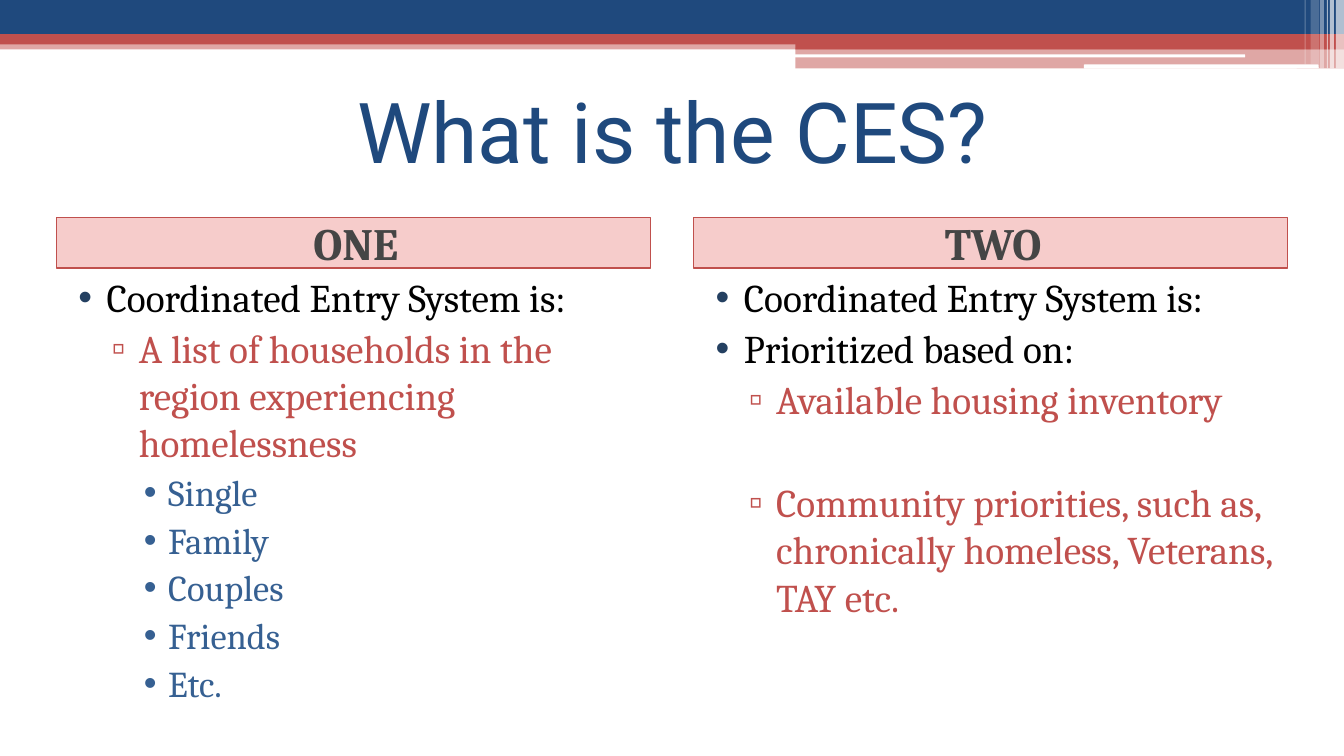
from lxml.etree import SubElement
from pptx import Presentation
from pptx.dml.color import RGBColor
from pptx.enum.shapes import MSO_SHAPE
from pptx.enum.text import MSO_ANCHOR, PP_ALIGN
from pptx.oxml.ns import qn
from pptx.util import Inches, Pt

HUE = {
    "navy": "1F497D", "brick": "C0504D", "white": "FFFFFF", "pink": "DD3530",
    "gray": "454545", "black": "000000", "ink": "244061", "blue": "366092",
}

deck = Presentation()
deck.slide_width, deck.slide_height = Inches(13.33), Inches(7.5)
slide = deck.slides.add_slide(deck.slide_layouts[6])


def block(box, hue, alpha=100, kind=MSO_SHAPE.RECTANGLE):
    shape = slide.shapes.add_shape(kind, *map(Inches, box))
    shape.shadow.inherit = False
    shape.line.fill.background()
    shape.fill.solid()
    shape.fill.fore_color.rgb = RGBColor.from_string(HUE[hue])
    if alpha < 100:
        color = shape.fill._xPr.find(".//" + qn("a:srgbClr"))
        SubElement(color, qn("a:alpha"), val=str(alpha * 1000))
    return shape


def style(para, face, size, hue, bold=False):
    for run in para.runs:
        run.font.name, run.font.size, run.font.bold = face, Pt(size), bold
        run.font.color.rgb = RGBColor.from_string(HUE[hue])


# Banner bands: left, top, width, height, colour, opacity
wide, half = 13.33, 7.89
for *box, hue, alpha in [
    (0, 0.4, wide, 0.09, "brick", 50),
    (0, 0, wide, 0.34, "navy", 100),
    (0, 0.34, wide, 0.1, "brick", 100),
    (half, 0.39, wide - half, 0.1, "brick", 100),
    (half, 0.48, wide - half, 0.2, "brick", 50),
]:
    block(box, hue, alpha)

# White slits in the banner
for box in [(7.88, 0.54, 4.47, 0.03), (10.75, 0.64, 2.33, 0.04)]:
    block(box, "white", kind=MSO_SHAPE.ROUNDED_RECTANGLE)

# Pale stripes at the right end: left, width, height, opacity
for left, width, high, alpha in [
    (13.25, 0.08, 0.68, 65), (13.19, 0.04, 0.68, 65), (13.16, 0.01, 0.68, 60),
    (13.09, 0.04, 0.68, 40), (13, 0.08, 0.64, 20), (12.94, 0.01, 0.64, 30),
]:
    block((left, 0, width, high), "white", alpha)

# Title
edge = 0.56
title = slide.shapes.add_textbox(*map(Inches, (edge, 0.7, 12.22, 1.17)))
frame = title.text_frame
frame.word_wrap = True
frame.vertical_anchor = MSO_ANCHOR.MIDDLE
frame.text = "What is the CES?"
frame.paragraphs[0].alignment = PP_ALIGN.CENTER
style(frame.paragraphs[0], "Roboto", 60, "navy")

# Outline levels: indent, hang, bullet, bullet colour, size, text colour
LEVELS = [
    (0.4, 0.28, "•", "ink", 28, "black"),
    (0.72, 0.27, "▫", "brick", 28, "brick"),
    (1.01, 0.24, "•", "blue", 26, "blue"),
]
GAP, BREAK = 3, 40  # points before a paragraph

# Columns: heading, then level, text, space before
COLUMNS = [
    ("ONE", [
        (0, "Coordinated Entry System is:", 0),
        (1, "A list of households in the region experiencing homelessness", GAP),
        (2, "Single", GAP),
        (2, "Family", GAP),
        (2, "Couples", GAP),
        (2, "Friends", GAP),
        (2, "Etc.", GAP),
    ]),
    ("TWO", [
        (0, "Coordinated Entry System is:", 0),
        (0, "Prioritized based on:", GAP),
        (1, "Available housing inventory", GAP),
        (1, "Community priorities, such as, chronically homeless, Veterans, "
            "TAY etc.", BREAK),
    ]),
]
span, pitch, top, tall = 5.89, 6.32, 2.16, 0.5

for col, (name, items) in enumerate(COLUMNS):
    left = edge + col * pitch

    # Heading bar
    head = block((left, top, span, tall), "pink", 25)
    head.line.color.rgb = RGBColor.from_string(HUE["brick"])
    head.line.width = Pt(1)
    frame = head.text_frame
    frame.vertical_anchor = MSO_ANCHOR.MIDDLE
    frame.text = name
    para = frame.paragraphs[0]
    para.alignment = PP_ALIGN.CENTER
    para._p.get_or_add_pPr().set("marL", str(Inches(0.05)))
    style(para, "Cambria", 32, "gray", True)

    # Bulleted list
    body = slide.shapes.add_textbox(
        *map(Inches, (left, top + tall, span, 4.55)))
    frame = body.text_frame
    frame.word_wrap = True
    for row, (level, text, space) in enumerate(items):
        indent, hang, mark, tint, size, hue = LEVELS[level]
        para = frame.add_paragraph() if row else frame.paragraphs[0]
        para.text = text
        para.level = level
        if space:
            para.space_before = Pt(space)
        props = para._p.get_or_add_pPr()
        props.set("marL", str(Inches(indent)))
        props.set("indent", str(-Inches(hang)))
        color = SubElement(props, qn("a:buClr"))
        SubElement(color, qn("a:srgbClr"), val=HUE[tint])
        SubElement(props, qn("a:buFont"), typeface="Arial")
        SubElement(props, qn("a:buChar"), char=mark)
        style(para, "Cambria", size, hue)

deck.save("out.pptx")
